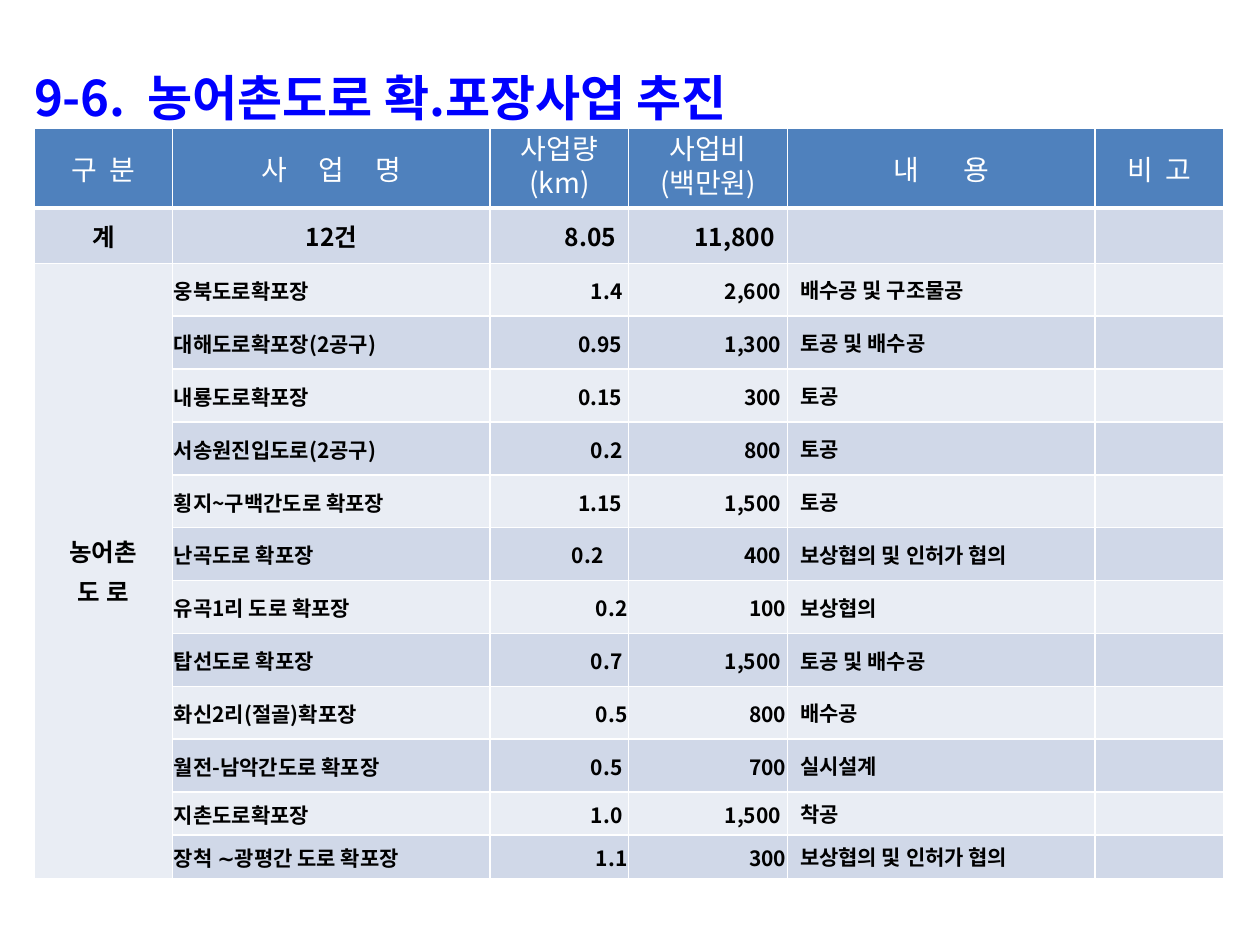
"""Build the rural road widening and paving table slide."""
from lxml import etree
from pptx import Presentation, util as u
from pptx.dml.color import RGBColor
from pptx.enum import text
from pptx.oxml import ns

FONT = "Noto Sans CJK KR"
HUES = {"title": "0000FF", "head": "4F81BD", "dark": "D0D8E8",
        "light": "E9EDF4", "white": "FFFFFF", "black": "000000"}
LEFT, MID, RIGHT = text.PP_ALIGN.LEFT, text.PP_ALIGN.CENTER, text.PP_ALIGN.RIGHT


def add_run(para, words, size, hue, bold, gap=0):
    run = para.add_run()
    run.text = words
    run.font.size = u.Pt(size)
    run.font.bold = bold
    run.font.name = FONT
    run.font.color.rgb = RGBColor.from_string(HUES[hue])
    props = run.font._element
    etree.SubElement(props, ns.qn("a:ea"), typeface=FONT)
    if gap:
        props.set("spc", str(gap))


def fill_cell(cell, lines, size, hue, bold, align, pads, pitch=1.0, gap=0):
    cell.vertical_anchor = text.MSO_ANCHOR.MIDDLE
    cell.margin_left, cell.margin_top, cell.margin_right, cell.margin_bottom = map(u.Inches, pads)
    frame = cell.text_frame
    for i, line in enumerate(lines.split("\n")):
        para = frame.add_paragraph() if i else frame.paragraphs[0]
        para.alignment = align
        para.line_spacing = pitch
        if i:
            para.space_before = u.Pt(size * 0.2)
        if gap:
            add_run(para, line[:-1], size, hue, bold, gap)
            add_run(para, line[-1], size, hue, bold)
        elif line:
            add_run(para, line, size, hue, bold)
        else:
            etree.SubElement(para._p, ns.qn("a:endParaRPr"), sz=str(size * 100))


deck = Presentation()
deck.slide_width, deck.slide_height = u.Inches(10), u.Inches(7.5)
slide = deck.slides.add_slide(deck.slide_layouts[5])

title = slide.shapes.title
title.left, title.top = u.Inches(0.17), u.Inches(0.39)
title.width, title.height = u.Inches(9.76), u.Inches(0.63)
frame = title.text_frame
frame.auto_size = text.MSO_AUTO_SIZE.NONE
frame.vertical_anchor = text.MSO_ANCHOR.TOP
para = frame.paragraphs[0]
para.alignment = LEFT
para.line_spacing = 1.2
para.space_before = u.Pt(0)
add_run(para, "9-6.  농어촌도로 확.포장사업 추진", 28, "title", True)

wides = [1.1, 2.52, 1.1, 1.26, 2.44, 1.02]
highs = [0.63, 0.44] + [0.42] * 10 + [0.33] * 2
grid = slide.shapes.add_table(
    len(highs), len(wides), u.Inches(0.27), u.Inches(1.02),
    u.Inches(sum(wides)), u.Inches(sum(highs))).table
for col, wide in zip(grid.columns, wides):
    col.width = u.Inches(wide)
for row, high in zip(grid.rows, highs):
    row.height = u.Inches(high)

WIDE = (0.1, 0.05, 0.1, 0.05)
heads = [("구 분", 1, 180), ("사 업 명", 1, 720), ("사업량\n(km)", 0.7, 0),
         ("사업비\n(백만원)", 0.7, 0), ("내 용", 1, 1080), ("비 고", 1, 180)]
for c, (words, pitch, gap) in enumerate(heads):
    fill_cell(grid.cell(0, c), words, 16, "white", False, MID, WIDE, pitch, gap)

sums = ["계", "12건", "8.05", "11,800", "", ""]
for c, words in enumerate(sums):
    fill_cell(grid.cell(1, c), words, 14, "black", True, RIGHT if c in (2, 3) else MID, WIDE)

EDGE, NEAR, FAR = 0.01, 0.05, 0.2
works = [
    ("웅북도로확포장", "1.4", NEAR, "2,600", NEAR, "배수공 및 구조물공"),
    ("대해도로확포장(2공구)", "0.95", NEAR, "1,300", NEAR, "토공 및 배수공"),
    ("내룡도로확포장", "0.15", NEAR, "300", NEAR, "토공"),
    ("서송원진입도로(2공구)", "0.2", NEAR, "800", NEAR, "토공"),
    ("횡지~구백간도로 확포장", "1.15", NEAR, "1,500", NEAR, "토공"),
    ("난곡도로 확포장", "0.2", FAR, "400", NEAR, "보상협의 및 인허가 협의"),
    ("유곡1리 도로 확포장", "0.2", EDGE, "100", EDGE, "보상협의"),
    ("탑선도로 확포장", "0.7", NEAR, "1,500", NEAR, "토공 및 배수공"),
    ("화신2리(절골)확포장", "0.5", EDGE, "800", EDGE, "배수공"),
    ("월전-남악간도로 확포장", "0.5", NEAR, "700", EDGE, "실시설계"),
    ("지촌도로확포장", "1.0", NEAR, "1,500", NEAR, "착공"),
    ("장척 ∼광평간 도로 확포장", "1.1", EDGE, "300", EDGE, "보상협의 및 인허가 협의"),
]
for r, (name, size, inset, cost, pad, note) in enumerate(works, 2):
    parts = [(name, LEFT, (0.01, 0.01, 0.01, 0)),
             (size, RIGHT, (0.01, 0.01, inset, 0)),
             (cost, RIGHT, (0.01, 0.01, pad, 0)),
             (note, LEFT, WIDE), ("", LEFT, WIDE)]
    for c, (words, align, pads) in enumerate(parts, 1):
        fill_cell(grid.cell(r, c), words, 12, "black", True, align, pads)
    if r > 2:
        fill_cell(grid.cell(r, 0), "", 12, "black", True, MID, WIDE)
fill_cell(grid.cell(2, 0), "농어촌\n도 로", 14, "black", True, MID, WIDE)
grid.cell(2, 0).merge(grid.cell(len(highs) - 1, 0))

for r in range(len(highs)):
    for c in range(len(wides)):
        cell = grid.cell(r, c)
        props = cell._tc.get_or_add_tcPr()
        for side in "LRTB":
            thick = 3 if r == 0 and side == "B" else 1
            line = etree.SubElement(props, ns.qn("a:ln" + side), w=str(u.Pt(thick)))
            paint = etree.SubElement(line, ns.qn("a:solidFill"))
            etree.SubElement(paint, ns.qn("a:srgbClr"), val=HUES["white"])
        hue = "head" if r == 0 else "dark" if r % 2 and c + r != 0 else "light"
        if c == 0 and r > 1:
            hue = "light"
        cell.fill.solid()
        cell.fill.fore_color.rgb = RGBColor.from_string(HUES[hue])

deck.save("out.pptx")
